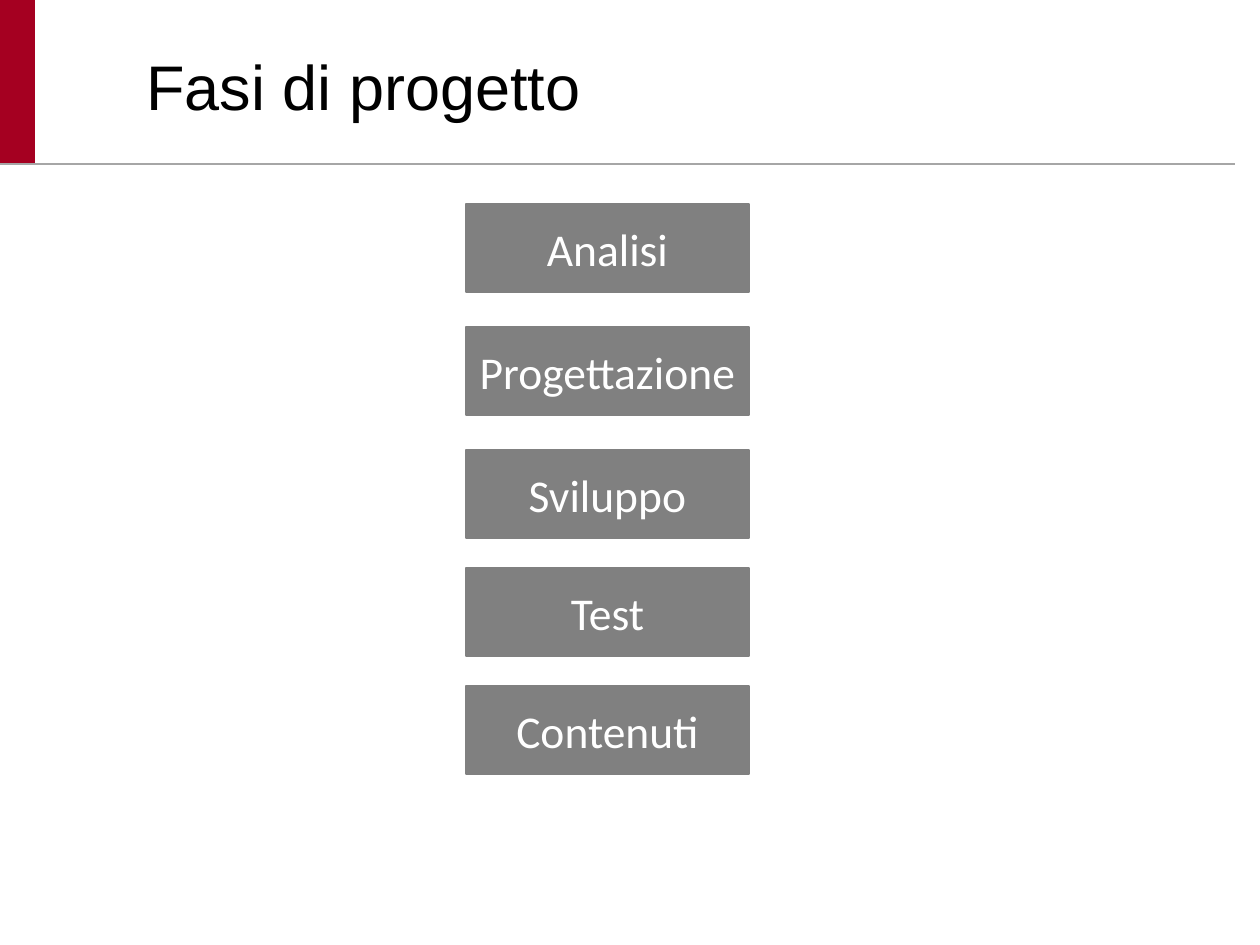
from dataclasses import dataclass
from itertools import accumulate

from lxml.etree import SubElement
from pptx import Presentation
from pptx.dml.color import RGBColor
from pptx.enum.shapes import MSO_CONNECTOR as Connector, MSO_SHAPE as Shape
from pptx.enum.text import MSO_ANCHOR as Anchor, PP_ALIGN as Align
from pptx.oxml.ns import qn
from pptx.util import Emu, Pt


@dataclass(frozen=True)
class Theme:
    """Colours, fonts and type sizes of the slide."""
    accent: str = "A50021"
    rule: str = "A6A6A6"
    phase: str = "808080"
    title_ink: str = "000000"
    phase_ink: str = "FFFFFF"
    title_font: str = "Arial"
    phase_font: str = "Calibri"
    title_size: int = 36
    phase_size: int = 26


THEME = Theme()
PHASES = ["Analisi", "Progettazione", "Sviluppo", "Test", "Contenuti"]
PHASE_STEPS = [123, 123, 118, 118]


def px(length):
    """Turn whole pixels into EMU."""
    return Emu(round(length * 914400 / 126))


def color(code):
    """Turn a hex code into a colour."""
    return RGBColor.from_string(code)


def write(frame, words, font, size, ink, align):
    """Set one vertically centred line of text."""
    frame.vertical_anchor = Anchor.MIDDLE
    frame.text = words
    line = frame.paragraphs[0]
    line.alignment = align
    face = line.runs[0].font
    face.name, face.size = font, Pt(size)
    face.color.rgb = color(ink)


def add_block(slide, kind, box, fill):
    """Add a flat filled shape."""
    block = slide.shapes.add_shape(kind, *map(px, box))
    block.shadow.inherit = False
    block.fill.solid()
    block.fill.fore_color.rgb = color(fill)
    block.line.fill.background()
    return block


def add_header(slide, box, words):
    """Place the accent bar, rule and title in the header box."""
    left, top, width, height = box
    add_block(slide, Shape.RECTANGLE, (left, top, 35, height), THEME.accent)
    rule_y = px(top + height - 1)
    rule = slide.shapes.add_connector(
        Connector.STRAIGHT, px(left), rule_y, px(left + width - 25), rule_y)
    rule.line.color.rgb = color(THEME.rule)
    rule.line.width = Pt(1.5)
    SubElement(rule.line._get_or_add_ln().getparent(), qn("a:effectLst"))
    title = slide.shapes.add_textbox(
        px(left + 134), px(top + 6), px(width - 134), px(height - 7))
    title.text_frame.word_wrap = True
    write(title.text_frame, words, THEME.title_font, THEME.title_size,
          THEME.title_ink, Align.LEFT)


def add_phases(slide, box, phases, steps):
    """Stack the project phases down the box."""
    left, top, width, height = box
    tops = accumulate(steps, initial=top)
    block_height = height - sum(steps)
    for words, phase_top in zip(phases, tops):
        phase = add_block(slide, Shape.ROUNDED_RECTANGLE,
                          (left, phase_top, width, block_height), THEME.phase)
        phase.adjustments[0] = 0
        phase.line.color.rgb = color(THEME.phase)
        phase.line.width = Pt(0.75)
        phase.text_frame.word_wrap = False
        write(phase.text_frame, words, THEME.phase_font, THEME.phase_size,
              THEME.phase_ink, Align.CENTER)


def main():
    """Build and save the slide."""
    deck = Presentation()
    deck.slide_width, deck.slide_height = px(1260), px(945)
    slide = deck.slides.add_slide(deck.slide_layouts[6])
    add_header(slide, (0, 0, 1260, 165), "Fasi di progetto")
    add_phases(slide, (466, 204, 283, 570), PHASES, PHASE_STEPS)
    deck.save("out.pptx")


if __name__ == "__main__":
    main()
